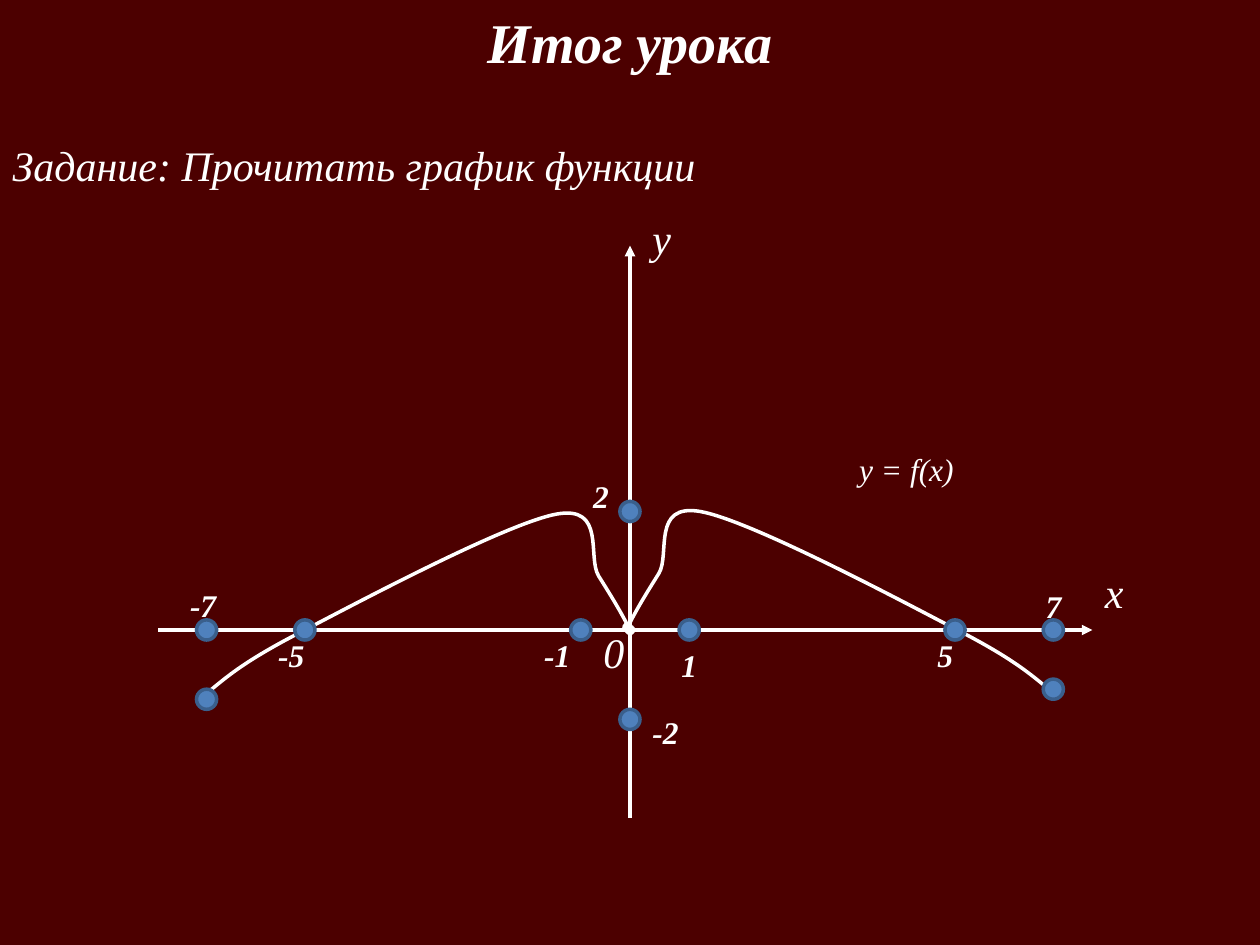
"""Builds the lesson summary slide: a task and the graph of an even function."""
from lxml.etree import SubElement
from pptx import Presentation
from pptx.dml.color import RGBColor
from pptx.enum.shapes import MSO_CONNECTOR, MSO_SHAPE
from pptx.enum.text import MSO_ANCHOR, MSO_AUTO_SIZE, PP_ALIGN
from pptx.oxml.ns import qn
from pptx.util import Inches, Pt

BACKGROUND = RGBColor(0x4C, 0x00, 0x00)
WHITE = RGBColor(0xFF, 0xFF, 0xFF)
DOT_FILL = RGBColor(0x4F, 0x81, 0xBD)
DOT_LINE = RGBColor(0x3A, 0x5F, 0x8C)
DOT_SIZE = 0.16


def write(paragraph, text, size=18, bold=False, align=PP_ALIGN.LEFT, before=0):
    paragraph.alignment = align
    paragraph.space_before = Pt(before)
    run = paragraph.add_run()
    run.text = text
    font = run.font
    font.name, font.size = "Times New Roman", Pt(size)
    font.bold, font.italic = bold, True
    font.color.rgb = WHITE


def style_stroke(stroke, head, tail=None):
    stroke.line.color.rgb = WHITE
    stroke.line.width = Pt(2)
    properties = stroke._element.spPr
    outline = properties.find(qn("a:ln"))
    SubElement(outline, qn("a:headEnd"), type=head)
    if tail:
        SubElement(outline, qn("a:tailEnd"), type=tail)
    SubElement(properties, qn("a:effectLst"))


presentation = Presentation()
presentation.slide_width, presentation.slide_height = Inches(10), Inches(7.5)
slide = presentation.slides.add_slide(presentation.slide_layouts[5])
slide.background.fill.solid()
slide.background.fill.fore_color.rgb = BACKGROUND
shapes = slide.shapes

title = shapes.title
title.left, title.top = Inches(0), Inches(-0.01)
title.width, title.height = Inches(10), Inches(1.58)
heading = title.text_frame
heading.vertical_anchor = MSO_ANCHOR.MIDDLE
heading.auto_size = MSO_AUTO_SIZE.NONE
write(heading.paragraphs[0], "Итог урока", size=32, bold=True, align=PP_ALIGN.CENTER)
write(heading.add_paragraph(), "Задание: Прочитать график функции", size=24,
      align=PP_ALIGN.JUSTIFY, before=37)

for tip_x, tip_y, end_x, end_y in [(5, 1.95, 5, 6.49), (8.67, 5, 1.25, 5)]:
    axis = shapes.add_connector(MSO_CONNECTOR.STRAIGHT, Inches(tip_x), Inches(tip_y),
                                Inches(end_x), Inches(end_y))
    style_stroke(axis, "triangle")

left_branch = [(5, 5), (4.93, 4.86), (4.85, 4.73), (4.75, 4.57),
               (4.66, 4.42), (4.81, 4.01), (4.42, 4.08),
               (4.03, 4.15), (2.88, 4.76), (2.42, 5),
               (1.95, 5.24), (1.79, 5.38), (1.62, 5.52)]
right_branch = [(9.98 - x, y - 0.02) for x, y in left_branch]

for branch in (left_branch, right_branch):
    start, *controls = [(Inches(x), Inches(y)) for x, y in branch]
    builder = shapes.build_freeform(*start)
    builder.add_line_segments(controls, close=False)
    curve = builder.convert_to_shape()
    curve.fill.background()
    style_stroke(curve, "oval", "oval")
    outline_path = next(curve._element.iter(qn("a:path")))
    segments = outline_path.findall(qn("a:lnTo"))
    for first in range(0, len(segments), 3):
        bezier = SubElement(outline_path, qn("a:cubicBezTo"))
        for segment in segments[first:first + 3]:
            bezier.append(segment[0])
            outline_path.remove(segment)

axis_names = [("x", 8.67, 4.45), ("0", 4.69, 4.92), ("y", 5.08, 1.64)]
values = [("1", 5.31, 5.08, 0.31), ("-1", 4.22, 5, 0.47), ("2", 4.61, 3.74, 0.31),
          ("5", 7.34, 5, 0.31), ("-5", 2.11, 5, 0.54), ("-2", 5.08, 5.61, 0.63),
          ("7", 8.2, 4.61, 0.31), ("-7", 1.41, 4.6, 0.78)]
labels = [(*name, 0.55, 0.5, 24, False) for name in axis_names]
labels += [(*value, 0.4, 18, True) for value in values]
labels.append(("y = f(x)", 6.72, 3.52, 0.96, 0.4, 18, False))

for text, x, y, width, height, size, bold in labels:
    label = shapes.add_textbox(Inches(x), Inches(y), Inches(width), Inches(height))
    label.text_frame.word_wrap = text != "y = f(x)"
    label.text_frame.auto_size = MSO_AUTO_SIZE.SHAPE_TO_FIT_TEXT
    write(label.text_frame.paragraphs[0], text, size=size, bold=bold)

dot_centres = [(x, 5) for x in (1.64, 2.42, 4.61, 5.47, 7.58, 8.36)]
dot_centres += [(1.64, 5.55), (8.36, 5.47), (5, 4.06), (5, 5.71)]

for x, y in dot_centres:
    dot = shapes.add_shape(MSO_SHAPE.OVAL, Inches(x - DOT_SIZE / 2), Inches(y - DOT_SIZE / 2),
                           Inches(DOT_SIZE), Inches(DOT_SIZE))
    dot.shadow.inherit = False
    dot.fill.solid()
    dot.fill.fore_color.rgb = DOT_FILL
    dot.line.color.rgb = DOT_LINE
    dot.line.width = Pt(2)

presentation.save("out.pptx")
